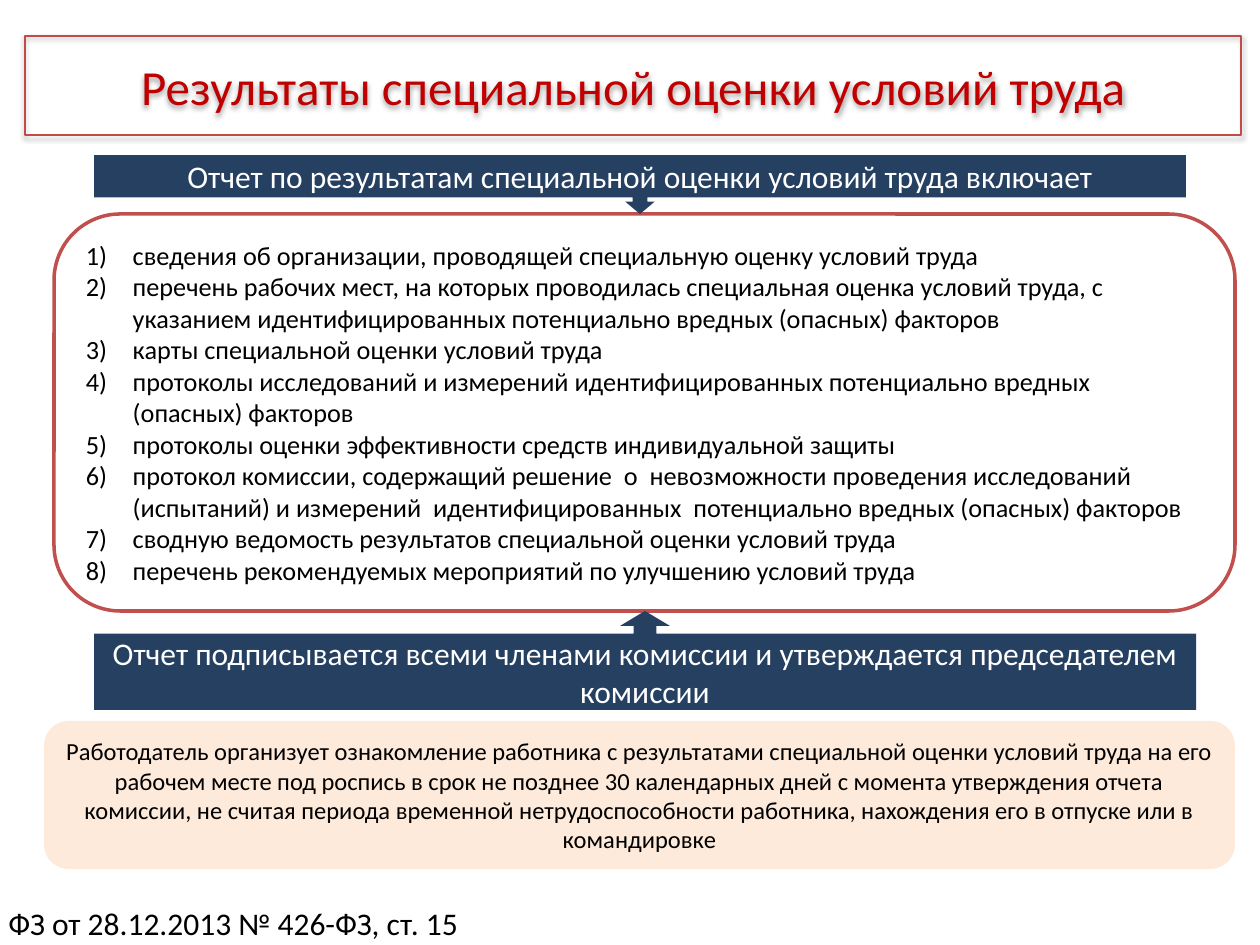
import lxml.etree
import pptx
import pptx.dml.color
import pptx.enum.shapes
import pptx.enum.text
import pptx.oxml.ns
import pptx.util

SHAPE = pptx.enum.shapes.MSO_SHAPE
ALIGN = pptx.enum.text.PP_ALIGN
ANCHOR = pptx.enum.text.MSO_ANCHOR
qn = pptx.oxml.ns.qn

PX_PER_INCH = 126
FONT = "Calibri"
COLORS = {
    "white": "FFFFFF",
    "black": "000000",
    "navy": "254061",
    "peach": "FDEADA",
    "red": "C00000",
    "frame": "C0504D",
    "title frame": "BF4C48",
}

REPORT_ITEMS = [
    "сведения об организации, проводящей специальную оценку условий труда",
    "перечень рабочих мест, на которых проводилась специальная оценка условий труда, "
    "с указанием идентифицированных потенциально вредных (опасных) факторов",
    "карты специальной оценки условий труда",
    "протоколы исследований и измерений идентифицированных потенциально вредных "
    "(опасных) факторов",
    "протоколы оценки эффективности средств индивидуальной защиты",
    "протокол комиссии, содержащий решение  о  невозможности проведения исследований "
    "(испытаний) и измерений  идентифицированных  потенциально вредных (опасных) факторов",
    "сводную ведомость результатов специальной оценки условий труда",
    "перечень рекомендуемых мероприятий по улучшению условий труда",
]


def px(length):
    return pptx.util.Emu(round(length * 914400 / PX_PER_INCH))


def color(name):
    return pptx.dml.color.RGBColor.from_string(COLORS[name])


def write_text(frame, *lines, size, ink="black", align=ALIGN.CENTER,
               anchor=ANCHOR.MIDDLE, number_indent=0):
    frame.word_wrap = True
    frame.vertical_anchor = anchor
    for index, line in enumerate(lines):
        para = frame.add_paragraph() if index else frame.paragraphs[0]
        para.alignment = align
        span = para.add_run()
        span.text = line
        span.font.name = FONT
        span.font.size = pptx.util.Pt(size)
        span.font.color.rgb = color(ink)
        if number_indent:
            props = para._p.get_or_add_pPr()
            props.set("marL", str(px(number_indent)))
            props.set("indent", str(-px(number_indent)))
            lxml.etree.SubElement(props, qn("a:buFont"), typeface="+mj-lt")
            lxml.etree.SubElement(props, qn("a:buAutoNum"), type="arabicParenR")


class SlideBuilder:
    def __init__(self, page):
        self.page = page

    def panel(self, kind, at, fill=None, line=None, line_width=1, adjust=()):
        box = self.page.shapes.add_shape(kind, *map(px, at))
        box.shadow.inherit = False
        for index, value in enumerate(adjust):
            box.adjustments[index] = value
        if fill:
            box.fill.solid()
            box.fill.fore_color.rgb = color(fill)
        else:
            box.fill.background()
        if line:
            box.line.color.rgb = color(line)
            box.line.width = pptx.util.Pt(line_width)
        else:
            box.line.fill.background()
        return box

    def callout(self, kind, at, text, adjust):
        box = self.panel(kind, at, fill="navy", adjust=adjust)
        write_text(box.text_frame, text, size=18, ink="white")

    def drop_shadow(self, box, blur, distance, alpha):
        effects = box._element.spPr.find(qn("a:effectLst"))
        shadow = lxml.etree.SubElement(
            effects, qn("a:outerShdw"), blurRad=str(pptx.util.Pt(blur)),
            dist=str(pptx.util.Pt(distance)), dir="5400000", rotWithShape="0")
        tint = lxml.etree.SubElement(shadow, qn("a:srgbClr"), val=COLORS["black"])
        lxml.etree.SubElement(tint, qn("a:alpha"), val=str(alpha * 1000))

    def label(self, at, text, **style):
        box = self.page.shapes.add_textbox(*map(px, at))
        write_text(box.text_frame, text, **style)


def main():
    deck = pptx.Presentation()
    deck.slide_width, deck.slide_height = px(1260), px(945)
    slide = SlideBuilder(deck.slides.add_slide(deck.slide_layouts[6]))

    # Contents of the report
    contents = slide.panel(SHAPE.ROUNDED_RECTANGLE, (54, 214, 1181, 397),
                           fill="white", line="frame", line_width=2)
    write_text(contents.text_frame, *REPORT_ITEMS, size=15, align=ALIGN.LEFT,
               number_indent=47)

    # Callouts pointing at the contents
    slide.callout(SHAPE.DOWN_ARROW_CALLOUT, (94, 155, 1092, 59),
                  "Отчет по результатам специальной оценки условий труда включает",
                  adjust=(0.25, 0.25, 0.21, 0.72))
    slide.callout(SHAPE.UP_ARROW_CALLOUT, (94, 611, 1102, 99),
                  "Отчет подписывается всеми членами комиссии и утверждается "
                  "председателем комиссии",
                  adjust=(0.23, 0.25, 0.15, 0.77))

    # Duty of the employer
    duty = slide.panel(SHAPE.ROUNDED_RECTANGLE, (44, 721, 1191, 148), fill="peach")
    write_text(duty.text_frame,
               "Работодатель организует ознакомление работника с результатами "
               "специальной оценки условий труда на его рабочем месте под роспись в срок "
               "не позднее 30 календарных дней с момента утверждения отчета комиссии, "
               "не считая периода временной нетрудоспособности работника, нахождения его "
               "в отпуске или в командировке", size=14)

    # Title
    title = slide.panel(SHAPE.RECTANGLE, (25, 36, 1216, 99),
                        line="title frame", line_width=0.75)
    slide.drop_shadow(title, blur=3.1, distance=1.6, alpha=38)
    write_text(title.text_frame, "Результаты специальной оценки условий труда",
               size=28, ink="red")

    # Legal reference
    slide.label((-4, 898, 968, 47), "ФЗ от 28.12.2013 № 426-ФЗ, ст. 15",
                size=18, align=ALIGN.LEFT, anchor=ANCHOR.TOP)

    deck.save("out.pptx")


if __name__ == "__main__":
    main()
